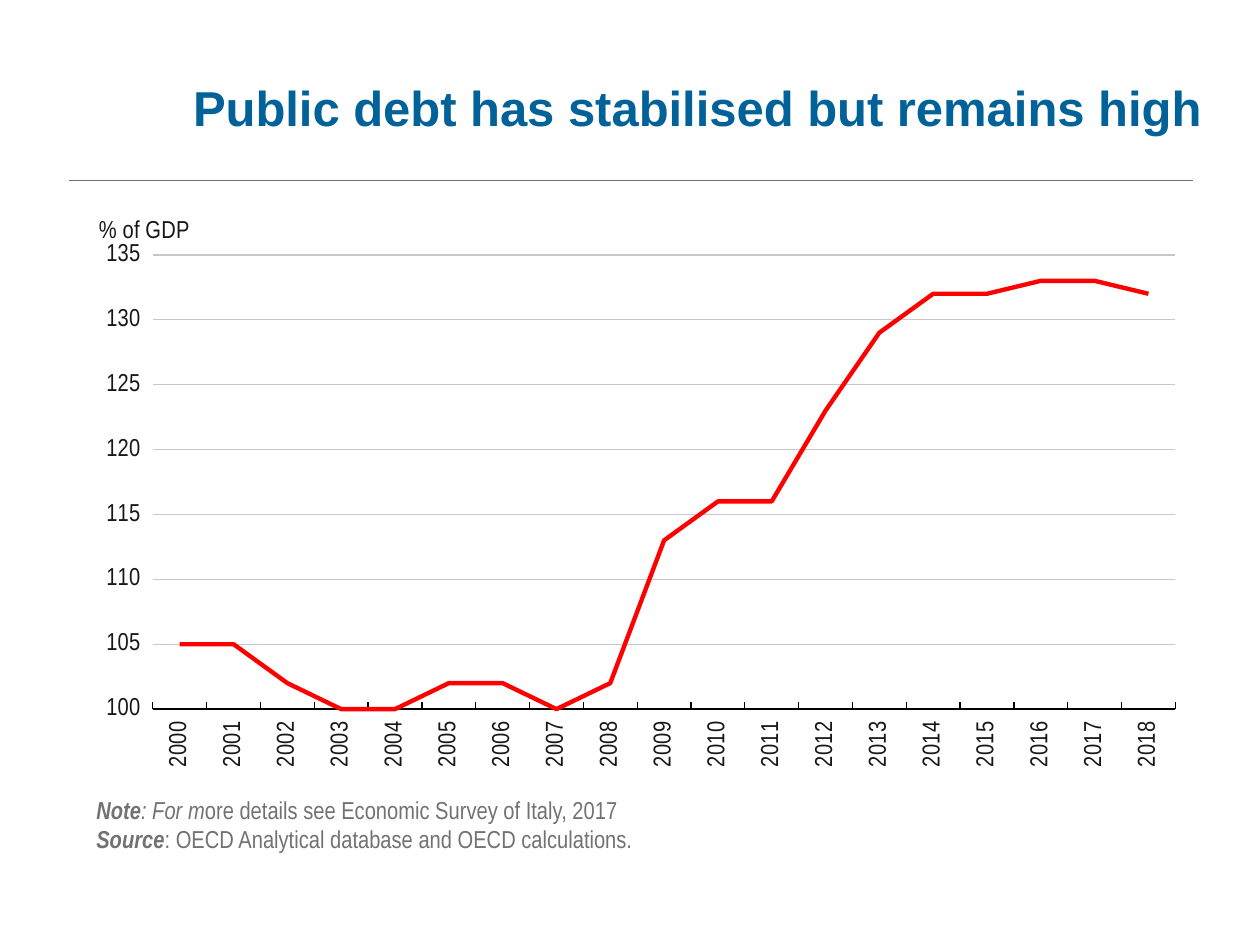
from dataclasses import dataclass

from lxml import etree
from pptx import Presentation
from pptx.chart.data import CategoryChartData
from pptx.dml.color import RGBColor
from pptx.enum.chart import XL_CHART_TYPE, XL_MARKER_STYLE, XL_TICK_LABEL_POSITION, XL_TICK_MARK
from pptx.enum.shapes import MSO_CONNECTOR
from pptx.enum.text import MSO_ANCHOR, PP_ALIGN
from pptx.oxml.ns import qn
from pptx.util import Pt

LINE_CHART = XL_CHART_TYPE.LINE
NO_MARKER = XL_MARKER_STYLE.NONE
LABELS_LOW = XL_TICK_LABEL_POSITION.LOW
TICK_INSIDE = XL_TICK_MARK.INSIDE
TICK_CROSS = XL_TICK_MARK.CROSS
TICK_NONE = XL_TICK_MARK.NONE
STRAIGHT = MSO_CONNECTOR.STRAIGHT
MIDDLE = MSO_ANCHOR.MIDDLE
TOP = MSO_ANCHOR.TOP
CENTER = PP_ALIGN.CENTER

BLUE = RGBColor(0x00, 0x62, 0x99)
GREY = RGBColor(0x72, 0x72, 0x72)
INK = RGBColor(0x17, 0x17, 0x17)
GRID = RGBColor(0xC8, 0xC8, 0xC8)
BLACK = RGBColor(0, 0, 0)
RED = RGBColor(0xFF, 0, 0)

HEADING_FONT = "Arial"
BODY_FONT = "Arial Narrow"

YEARS = [str(year) for year in range(2000, 2019)]
DEBT = (105, 105, 102, 100, 100, 102, 102, 100, 102, 113,
        116, 116, 123, 129, 132, 132, 133, 133, 132)


@dataclass(frozen=True)
class Span:
    text: str
    bold: bool = False
    italic: bool = False


NOTES = (
    (Span("Note", True, True), Span(": For m", italic=True),
     Span("ore details see Economic Survey of Italy, 2017")),
    (Span("Source", True, True),
     Span(": OECD Analytical database and OECD calculations.")),
)


def style_font(font, name: str, size: int, color: RGBColor,
               bold: bool = False, italic: bool = False) -> None:
    font.name = name
    font.size = Pt(size)
    font.color.rgb = color
    font.bold = bold
    font.italic = italic


def place_in_chart(parent, index: int, **settings) -> None:
    previous = parent.find(qn("c:layout"))
    if previous is not None:
        parent.remove(previous)
    layout = etree.Element(qn("c:layout"))
    manual = etree.SubElement(layout, qn("c:manualLayout"))
    for tag, value in settings.items():
        etree.SubElement(manual, qn(f"c:{tag}")).set("val", str(value))
    parent.insert(index, layout)


def add_title(slide) -> None:
    title = slide.shapes.title
    title.left, title.top, title.width, title.height = Pt(99.5), Pt(21), Pt(598), Pt(80.5)
    frame = title.text_frame
    frame.word_wrap = True
    frame.vertical_anchor = MIDDLE
    paragraph = frame.paragraphs[0]
    paragraph.alignment = CENTER
    run = paragraph.add_run()
    run.text = "Public debt has stabilised but remains high"
    style_font(run.font, HEADING_FONT, 28, BLUE, bold=True)


def add_rule(slide) -> None:
    rule = slide.shapes.add_connector(STRAIGHT, Pt(39.5), Pt(103), Pt(682), Pt(103))
    rule.line.color.rgb = GREY
    rule.line.width = Pt(0.5)
    etree.SubElement(rule._element.spPr, qn("a:effectLst"))


def add_notes(slide) -> None:
    notes = slide.shapes.add_textbox(Pt(48), Pt(434), Pt(340), Pt(75))
    frame = notes.text_frame
    frame.word_wrap = True
    frame.vertical_anchor = TOP
    frame.margin_top = Pt(20)
    for number, spans in enumerate(NOTES):
        paragraph = frame.add_paragraph() if number else frame.paragraphs[0]
        for span in spans:
            run = paragraph.add_run()
            run.text = span.text
            style_font(run.font, BODY_FONT, 14, GREY, span.bold, span.italic)


def format_year_axis(axis) -> None:
    axis.tick_label_position = LABELS_LOW
    axis.major_tick_mark = TICK_INSIDE
    axis.minor_tick_mark = TICK_NONE
    axis.has_major_gridlines = False
    axis.format.line.color.rgb = BLACK
    axis.format.line.width = Pt(0.75)
    style_font(axis.tick_labels.font, BODY_FONT, 14, INK)
    body = axis._element.find(qn("c:txPr")).find(qn("a:bodyPr"))
    body.set("rot", "-5400000")
    body.set("vert", "horz")


def format_debt_axis(axis) -> None:
    axis.minimum_scale, axis.maximum_scale, axis.major_unit = 100, 135, 5
    axis.major_tick_mark = TICK_CROSS
    axis.minor_tick_mark = TICK_NONE
    axis.format.line.fill.background()
    axis.has_major_gridlines = True
    axis.major_gridlines.format.line.color.rgb = GRID
    axis.major_gridlines.format.line.width = Pt(0.75)
    style_font(axis.tick_labels.font, BODY_FONT, 14, INK)
    axis.tick_labels.number_format = "General"
    axis.tick_labels.number_format_is_linked = False
    unit = axis.axis_title
    run = unit.text_frame.paragraphs[0].add_run()
    run.text = "% of GDP"
    style_font(run.font, BODY_FONT, 14, INK)
    body = next(unit._element.iter(qn("a:bodyPr")))
    body.set("rot", "0")
    body.set("vert", "horz")
    place_in_chart(unit._element, 1, xMode="edge", yMode="edge", x=0, y=0.03)


def add_debt_chart(slide) -> None:
    data = CategoryChartData(number_format="General")
    data.categories = YEARS
    data.add_series("Series 1", DEBT)
    chart = slide.shapes.add_chart(
        LINE_CHART, Pt(54), Pt(111.5), Pt(618), Pt(332), data).chart
    chart.has_legend = False
    chart.has_title = False
    style_font(chart.font, BODY_FONT, 14, INK)
    chart.plots[0].vary_by_categories = False
    debt = chart.plots[0].series[0]
    debt.smooth = False
    debt.marker.style = NO_MARKER
    debt.format.line.color.rgb = RED
    debt.format.line.width = Pt(2.5)
    format_year_axis(chart.category_axis)
    format_debt_axis(chart.value_axis)
    place_in_chart(next(chart._chartSpace.iter(qn("c:plotArea"))), 0,
                   layoutTarget="inner", xMode="edge", yMode="edge",
                   x=0.054, y=0.103, w=0.946, h=0.782)


def main() -> None:
    presentation = Presentation()
    presentation.slide_width, presentation.slide_height = Pt(720), Pt(540)
    slide = presentation.slides.add_slide(presentation.slide_layouts[5])
    add_rule(slide)
    add_title(slide)
    add_notes(slide)
    add_debt_chart(slide)
    presentation.save("out.pptx")


if __name__ == "__main__":
    main()
